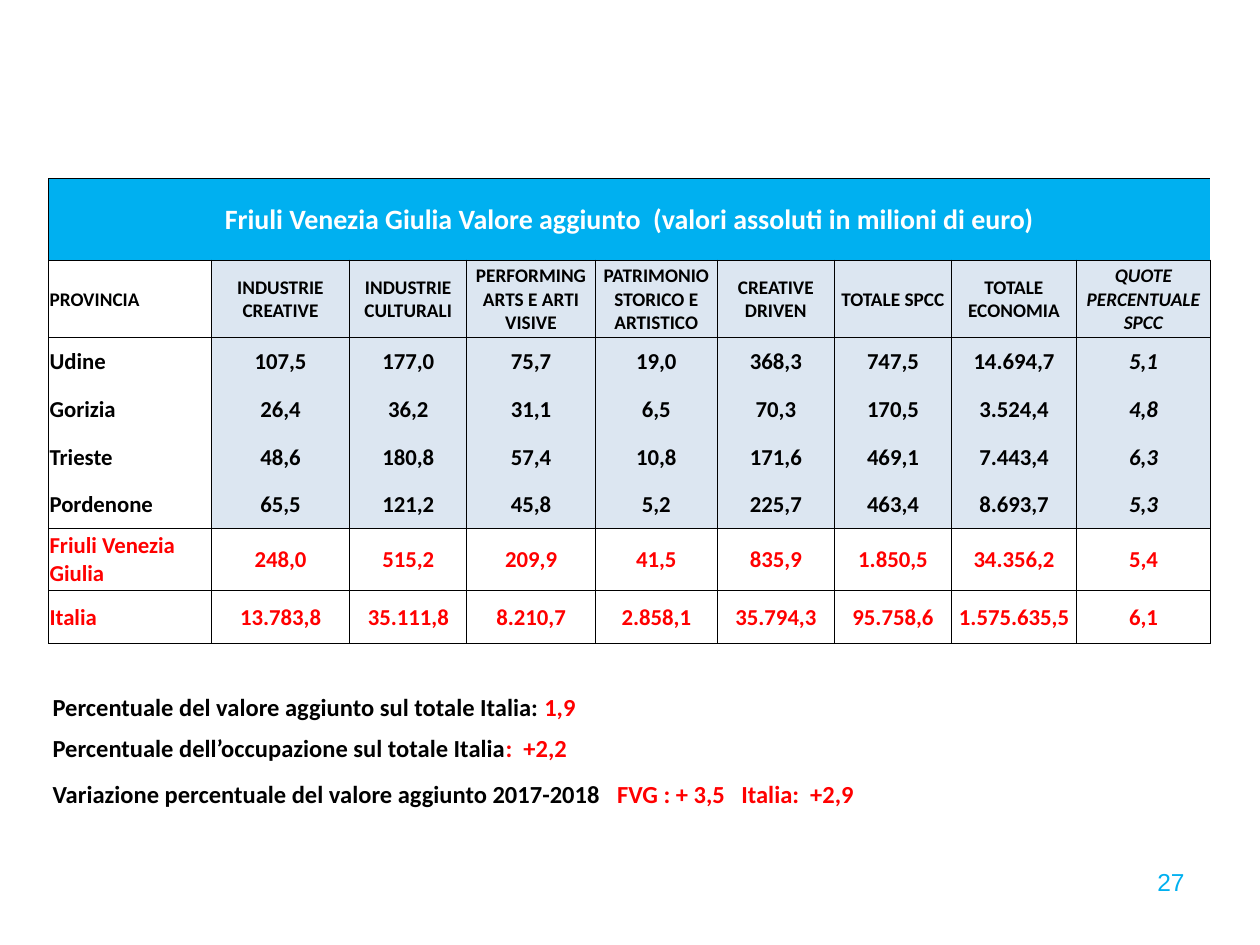
import dataclasses
import typing

import lxml.etree
import pptx
import pptx.dml.color
import pptx.enum.text
import pptx.oxml.ns
import pptx.util

Cm = pptx.util.Cm
Pt = pptx.util.Pt
ALIGN = pptx.enum.text.PP_ALIGN

BLACK, WHITE, RED = "000000", "FFFFFF", "FF0000"
CYAN, PALE = "00B0F0", "DCE6F1"

TITLE = "Friuli Venezia Giulia Valore aggiunto  (valori assoluti in milioni di euro)"
WIDTHS = (3.28, 2.79, 2.36, 2.59, 2.46, 2.36, 2.36, 2.52, 2.7)


@dataclasses.dataclass
class Row:
    height: float
    cells: tuple[str, ...]
    size: float = 13
    color: str = BLACK
    fill: str = PALE
    slant: bool = True  # last column in italics
    sides: str = "LRTB"


@dataclasses.dataclass
class Note:
    top: float
    width: float
    label: str
    value: str


ROWS = (
    Row(1.64, (TITLE,) + ("",) * 8, 16, WHITE, CYAN, False, "TB"),
    Row(1.57, ("PROVINCIA", "INDUSTRIE CREATIVE", "INDUSTRIE CULTURALI",
               "PERFORMING ARTS E ARTI VISIVE", "PATRIMONIO STORICO E ARTISTICO",
               "CREATIVE DRIVEN", "TOTALE SPCC", "TOTALE ECONOMIA",
               "QUOTE PERCENTUALE SPCC"), 11),
    Row(0.96, ("Udine", "107,5", "177,0", "75,7", "19,0", "368,3", "747,5",
               "14.694,7", "5,1"), sides="LRT"),
    Row(0.96, ("Gorizia", "26,4", "36,2", "31,1", "6,5", "70,3", "170,5",
               "3.524,4", "4,8"), sides="LR"),
    Row(0.96, ("Trieste", "48,6", "180,8", "57,4", "10,8", "171,6", "469,1",
               "7.443,4", "6,3"), sides="LR"),
    Row(0.96, ("Pordenone", "65,5", "121,2", "45,8", "5,2", "225,7", "463,4",
               "8.693,7", "5,3"), sides="LRB"),
    Row(1.25, ("Friuli Venezia Giulia", "248,0", "515,2", "209,9", "41,5", "835,9",
               "1.850,5", "34.356,2", "5,4"), 13, RED, WHITE, False),
    Row(1.07, ("Italia", "13.783,8", "35.111,8", "8.210,7", "2.858,1", "35.794,3",
               "95.758,6", "1.575.635,5", "6,1"), 13, RED, WHITE, False),
)

NOTES = (
    Note(13.82, 11.13, "Percentuale del valore aggiunto sul totale Italia: ", "1,9"),
    Note(14.66, 10.95, "Percentuale dell’occupazione sul totale Italia", ":  +2,2"),
    Note(15.57, 16.99, "Variazione percentuale del valore aggiunto 2017-2018   ",
         "FVG : + 3,5   Italia:  +2,9"),
)


def paint(target: typing.Any, color: str) -> None:
    """Give a font colour or a solid fill its hex colour."""
    target.rgb = pptx.dml.color.RGBColor.from_string(color)


def style(item: typing.Any, **values: typing.Any) -> None:
    for name, value in values.items():
        setattr(item, name, value)


def write(para: typing.Any, text: str, color: str, **font: typing.Any) -> None:
    run = para.add_run()
    run.text = text
    style(run.font, **{"name": "Calibri", "bold": True, **font})
    paint(run.font.color, color)


def border(cell: typing.Any, sides: str) -> None:
    """Draw the named sides of a cell and clear the others."""
    props = cell._tc.get_or_add_tcPr()
    for side in "LRTB":
        tag = pptx.oxml.ns.qn
        line = lxml.etree.SubElement(props, tag(f"a:ln{side}"), w=str(Pt(0.5)))
        if side in sides:
            fill = lxml.etree.SubElement(line, tag("a:solidFill"))
            lxml.etree.SubElement(fill, tag("a:srgbClr"), val=BLACK)
        else:
            lxml.etree.SubElement(line, tag("a:noFill"))


def draw_cell(cell: typing.Any, row: Row, col: int, last: int) -> None:
    is_title = row.fill == CYAN
    border(cell, row.sides + ("L" if is_title and col == 0 else ""))
    cell.fill.solid()
    paint(cell.fill.fore_color, WHITE if col == 0 and not is_title else row.fill)
    style(cell, margin_left=Cm(0.02), margin_right=Cm(0.02), margin_top=Cm(0.02),
          margin_bottom=0, vertical_anchor=pptx.enum.text.MSO_ANCHOR.MIDDLE)
    para = cell.text_frame.paragraphs[0]
    para.alignment = ALIGN.CENTER if col or is_title else ALIGN.LEFT
    if row.cells[col]:
        write(para, row.cells[col], row.color, size=Pt(row.size),
              italic=row.slant and col == last)


def draw_table(slide: typing.Any) -> None:
    last = len(WIDTHS) - 1
    table = slide.shapes.add_table(
        len(ROWS), len(WIDTHS), Cm(0.98), Cm(3.6), Cm(sum(WIDTHS)),
        Cm(sum(row.height for row in ROWS))).table
    style(table, first_row=False, horz_banding=False)
    for col, width in enumerate(WIDTHS):
        table.columns[col].width = Cm(width)
    for num, row in enumerate(ROWS):
        table.rows[num].height = Cm(row.height)
        for col in range(len(WIDTHS)):
            draw_cell(table.cell(num, col), row, col, last)
    table.cell(0, 0).merge(table.cell(0, last))


def draw_note(slide: typing.Any, note: Note) -> None:
    box = slide.shapes.add_textbox(Cm(0.81), Cm(note.top), Cm(note.width), Cm(0.86))
    style(box.text_frame, word_wrap=False,
          auto_size=pptx.enum.text.MSO_AUTO_SIZE.SHAPE_TO_FIT_TEXT)
    para = box.text_frame.paragraphs[0]
    write(para, note.label, BLACK, size=Pt(14))
    write(para, note.value, RED, size=Pt(14))


def draw_number(slide: typing.Any) -> None:
    box = slide.shapes.add_textbox(Cm(18.21), Cm(17.35), Cm(5.92), Cm(1.32))
    box.text_frame.word_wrap = True
    para = box.text_frame.paragraphs[0]
    para.alignment = ALIGN.RIGHT
    write(para, "27", CYAN, name="Arial", size=Pt(14), bold=False)


def main() -> None:
    deck = pptx.Presentation()
    style(deck, slide_width=Cm(25.4), slide_height=Cm(19.05))
    slide = deck.slides.add_slide(deck.slide_layouts[6])

    # Table of added value by province
    draw_table(slide)

    # Summary lines below the table
    for note in NOTES:
        draw_note(slide, note)

    # Page number
    draw_number(slide)

    deck.save("out.pptx")


if __name__ == "__main__":
    main()
